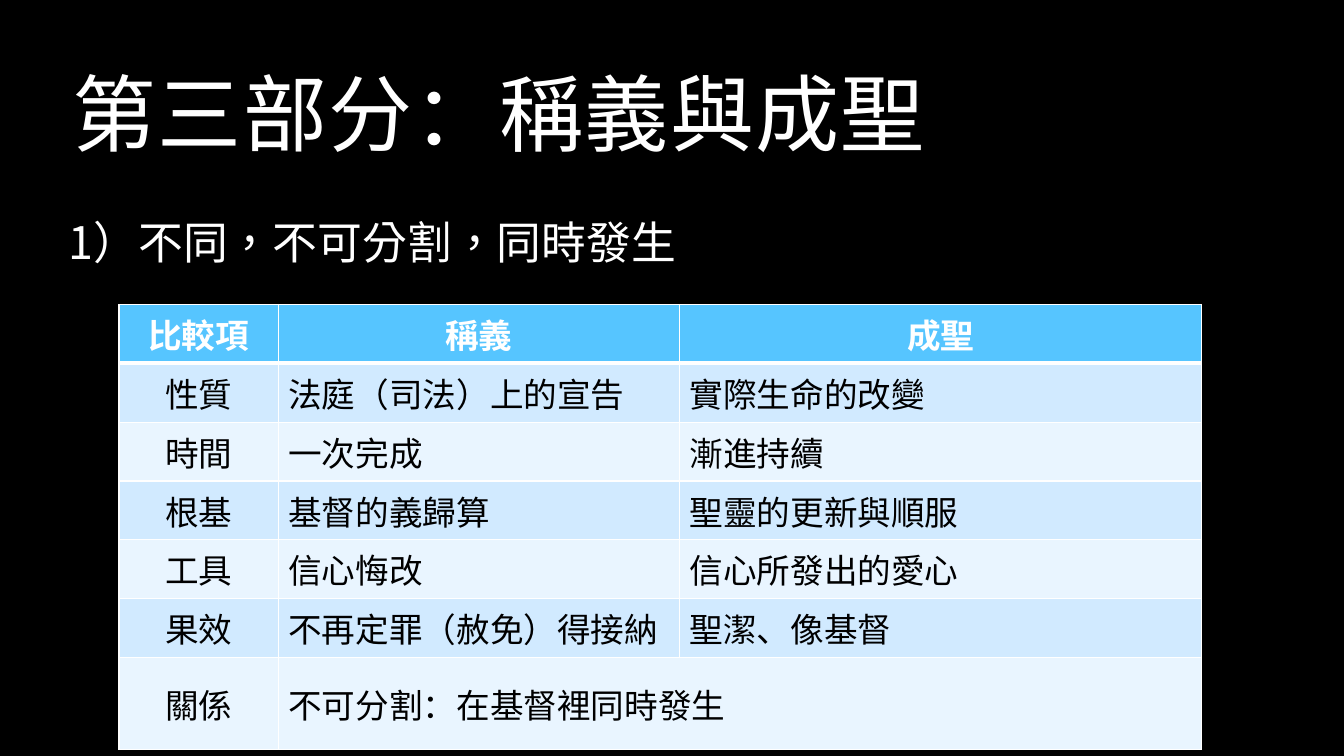
from lxml.etree import SubElement
from pptx import Presentation
from pptx.dml.color import RGBColor
from pptx.enum.text import MSO_ANCHOR as Anchor, MSO_AUTO_SIZE as AutoSize, PP_ALIGN as Align
from pptx.oxml.ns import qn
from pptx.util import Inches, Pt

# Content
TITLE = "第三部分：稱義與成聖"
POINT = "1）不同，不可分割，同時發生"
HEADER = ("比較項", "稱義", "成聖")
COMPARISON = [
    ("性質", "法庭（司法）上的宣告", "實際生命的改變"),
    ("時間", "一次完成", "漸進持續"),
    ("根基", "基督的義歸算", "聖靈的更新與順服"),
    ("工具", "信心悔改", "信心所發出的愛心"),
    ("果效", "不再定罪（赦免）得接納", "聖潔、像基督"),
    ("關係", "不可分割：在基督裡同時發生", ""),
]

# Look
BLACK = RGBColor(0x00, 0x00, 0x00)
WHITE = RGBColor(0xFF, 0xFF, 0xFF)
HEADER_BLUE = RGBColor(0x56, 0xC5, 0xFF)
BANDS = (RGBColor(0xE9, 0xF5, 0xFF), RGBColor(0xD1, 0xEA, 0xFF))
CJK_FONT = "Noto Sans CJK SC"

# Grid, in inches
COLUMNS = (1.58, 3.98, 5.18)
ROW, LAST_ROW = 0.53, 0.91
TABLE_LEFT, TABLE_TOP = 1.18, 3.02


def add_run(paragraph, text, size, color, font=CJK_FONT, bold=False, language="zh-CN"):
    run = paragraph.add_run()
    run.text = text
    run.font.size, run.font.name, run.font.bold = Pt(size), font, bold
    run.font.color.rgb = color
    properties = run.font._element
    properties.set("lang", language)
    SubElement(properties, qn("a:ea")).set("typeface", CJK_FONT)
    return properties


def place(placeholder, left, top, width, height, anchor):
    placeholder.left, placeholder.top = Inches(left), Inches(top)
    placeholder.width, placeholder.height = Inches(width), Inches(height)
    frame = placeholder.text_frame
    frame.auto_size, frame.word_wrap = AutoSize.NONE, True
    frame.vertical_anchor = anchor
    paragraph = frame.paragraphs[0]
    paragraph.alignment, paragraph.space_before = Align.LEFT, Pt(0)
    return paragraph


def add_borders(cell, bottom):
    properties = cell._tc.get_or_add_tcPr()
    for side, width in (("L", 1), ("R", 1), ("T", 1), ("B", bottom)):
        line = SubElement(properties, qn(f"a:ln{side}"), w=str(Pt(width)))
        fill = SubElement(line, qn("a:solidFill"))
        SubElement(fill, qn("a:srgbClr"), val=str(WHITE))


def main():
    presentation = Presentation()
    presentation.slide_width, presentation.slide_height = Inches(13.33), Inches(7.5)
    slide = presentation.slides.add_slide(presentation.slide_layouts[1])
    slide.background.fill.solid()
    slide.background.fill.fore_color.rgb = BLACK

    # Title
    title = place(slide.shapes.title, 0.62, 0.17, 11.88, 1.5, Anchor.BOTTOM)
    title.line_spacing = 0.9
    add_run(title, TITLE, 60, WHITE, font="Arial").set("spc", "100")

    # Body point, without a bullet
    point = place(slide.placeholders[1], 0.58, 2.08, 12.08, 5, Anchor.TOP)
    properties = point._p.get_or_add_pPr()
    properties.set("marL", "0")
    properties.set("indent", "0")
    SubElement(properties, qn("a:buNone"))
    add_run(point, POINT, 32, WHITE, language="zh-TW")

    # Comparison table
    rows = [HEADER, *COMPARISON]
    heights = [ROW] * len(COMPARISON) + [LAST_ROW]
    table = slide.shapes.add_table(
        len(rows), len(COLUMNS), Inches(TABLE_LEFT), Inches(TABLE_TOP),
        Inches(sum(COLUMNS)), Inches(sum(heights))).table
    for column, width in zip(table.columns, COLUMNS):
        column.width = Inches(width)
    for r, (texts, height) in enumerate(zip(rows, heights)):
        table.rows[r].height = Inches(height)
        is_header = r == 0
        for c, text in enumerate(texts):
            cell = table.cell(r, c)
            add_borders(cell, bottom=3 if is_header else 1)
            cell.fill.solid()
            cell.fill.fore_color.rgb = HEADER_BLUE if is_header else BANDS[r % 2]
            cell.vertical_anchor = Anchor.MIDDLE
            if text:
                paragraph = cell.text_frame.paragraphs[0]
                paragraph.alignment = Align.CENTER if is_header or c == 0 else Align.LEFT
                add_run(paragraph, text, 24, WHITE if is_header else BLACK, bold=is_header)
    last = len(rows) - 1
    table.cell(last, 1).merge(table.cell(last, 2))

    presentation.save("out.pptx")


if __name__ == "__main__":
    main()
